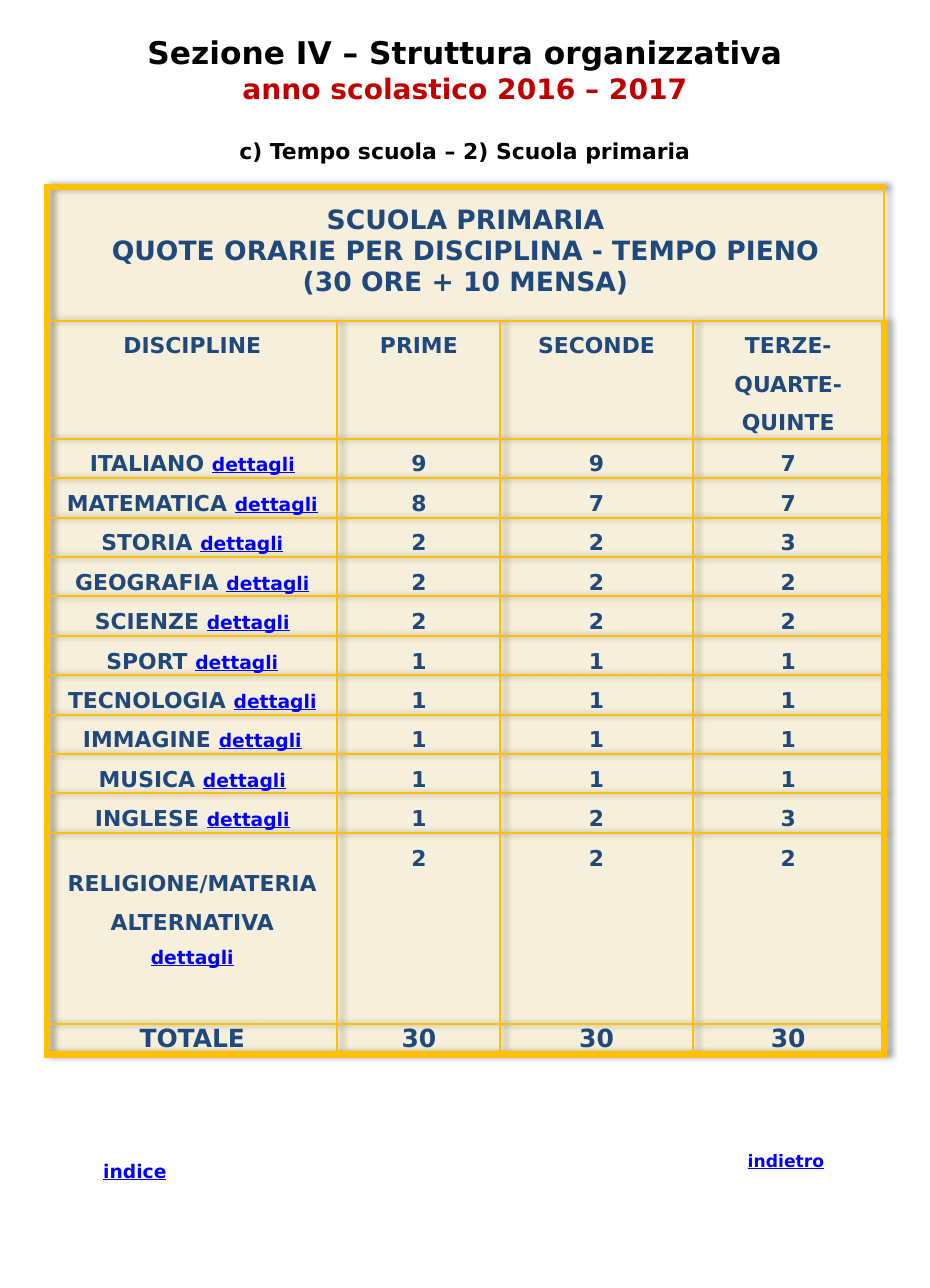
from lxml import etree
from pptx import Presentation
from pptx.dml.color import RGBColor
from pptx.enum import text as t
from pptx.oxml import ns
from pptx.util import Inches, Pt

BLACK = RGBColor(0x00, 0x00, 0x00)
RED = RGBColor(0xC0, 0x00, 0x00)
NAVY = RGBColor(0x1F, 0x49, 0x7D)
BLUE = RGBColor(0x00, 0x00, 0xFF)
GOLD = RGBColor(0xFF, 0xC0, 0x00)


def write(par, words, size, color, link=False):
    """Add a centred bold run, underlined when it is a link."""
    par.alignment = t.PP_ALIGN.CENTER
    run = par.add_run()
    run.text = words
    font = run.font
    font.name, font.size, font.bold = "DejaVu Sans", Pt(size), True
    font.color.rgb = color
    if link:
        font.underline = True


def add(parent, tag, **attrs):
    node = etree.SubElement(parent, ns.qn(tag))
    for key, value in attrs.items():
        node.set(key, str(value))
    return node


deck = Presentation()
deck.slide_width, deck.slide_height = Inches(8.27), Inches(11.45)
slide = deck.slides.add_slide(deck.slide_layouts[6])

# Heading and links
boxes = [
    ((0, 0.25, 8.27, 1.28), [
        ("Sezione IV – Struttura organizzativa", 20, BLACK, False),
        ("anno scolastico 2016 – 2017", 18, RED, False),
        ("c) Tempo scuola – 2) Scuola primaria", 14, BLACK, False)]),
    ((0.38, 10.26, 1.64, 0.3), [("indice", 12, BLUE, True)]),
    ((6.17, 10.18, 1.64, 0.29), [("indietro", 11, BLUE, True)]),
]
for place, lines in boxes:
    frame = slide.shapes.add_textbox(*map(Inches, place)).text_frame
    frame.word_wrap = True
    for i, line in enumerate(lines):
        par = frame.add_paragraph() if i else frame.paragraphs[0]
        write(par, *line)
        if i == 2:
            par.space_before = Pt(21)

# Timetable
title = ["SCUOLA PRIMARIA", "QUOTE ORARIE PER DISCIPLINA - TEMPO PIENO",
         "(30 ORE + 10 MENSA)"]
hours = [
    ("ITALIANO", 9, 9, 7),
    ("MATEMATICA", 8, 7, 7),
    ("STORIA", 2, 2, 3),
    ("GEOGRAFIA", 2, 2, 2),
    ("SCIENZE", 2, 2, 2),
    ("SPORT", 1, 1, 1),
    ("TECNOLOGIA", 1, 1, 1),
    ("IMMAGINE", 1, 1, 1),
    ("MUSICA", 1, 1, 1),
    ("INGLESE", 1, 2, 3),
    ("RELIGIONE/MATERIA ALTERNATIVA", 2, 2, 2),
]
rows = [("DISCIPLINE", "PRIME", "SECONDE", "TERZE-QUARTE-QUINTE"),
        *hours, ("TOTALE", 30, 30, 30)]
widths = [2.58, 1.45, 1.71, 1.7]
heights = [1.19, 1.05] + [0.35] * 10 + [1.7, 0.27]
last = len(rows)
faith = last - 1

table = slide.shapes.add_table(
    last + 1, 4, Inches(0.42), Inches(1.66), Inches(7.43), Inches(7.71)).table
table.first_row = table.horz_banding = False
for col, width in zip(table.columns, widths):
    col.width = Inches(width)
for row, height in zip(table.rows, heights):
    row.height = Inches(height)

props = table._tbl.tblPr
glow = add(props, "a:effectLst")
props.insert(0, glow)
shade = add(glow, "a:outerShdw", blurRad=Pt(4), dist=Pt(3), dir=0, algn="l")
add(add(shade, "a:srgbClr", val=BLACK), "a:alpha", val=40000)

for r in range(last + 1):
    for c in range(4):
        cell = table.cell(r, c)
        cell.margin_left = cell.margin_right = Inches(0.08)
        cell.margin_top = cell.margin_bottom = 0
        tc = cell._tc.get_or_add_tcPr()
        edges = {"L": c == 0, "R": c == 3, "T": r == 0, "B": r == last}
        for side, outer in edges.items():
            line = add(tc, "a:ln" + side, w=Pt(4.5 if outer else 1.5))
            add(add(line, "a:solidFill"), "a:srgbClr", val=GOLD)
        tint = add(add(tc, "a:solidFill"), "a:srgbClr", val=GOLD)
        add(tint, "a:alpha", val=10000)
        if r == 0:
            continue
        par = cell.text_frame.paragraphs[0]
        words = str(rows[r - 1][c])
        if r == last:
            write(par, words, 16, NAVY)
            continue
        par.line_spacing = 1.5
        linked = c == 0 and r > 1
        if linked and r != faith:
            words += " "
        write(par, words, 14, NAVY)
        if linked:
            if r == faith:
                cell.margin_top = Inches(0.23)
                par = cell.text_frame.add_paragraph()
                par.line_spacing = 1.5
            write(par, "dettagli", 12, BLUE, True)

head = table.cell(0, 0)
head.merge(table.cell(0, 3))
head.margin_top = Inches(0.16)
for i, words in enumerate(title):
    frame = head.text_frame
    write(frame.add_paragraph() if i else frame.paragraphs[0], words, 17, NAVY)

deck.save("out.pptx")
